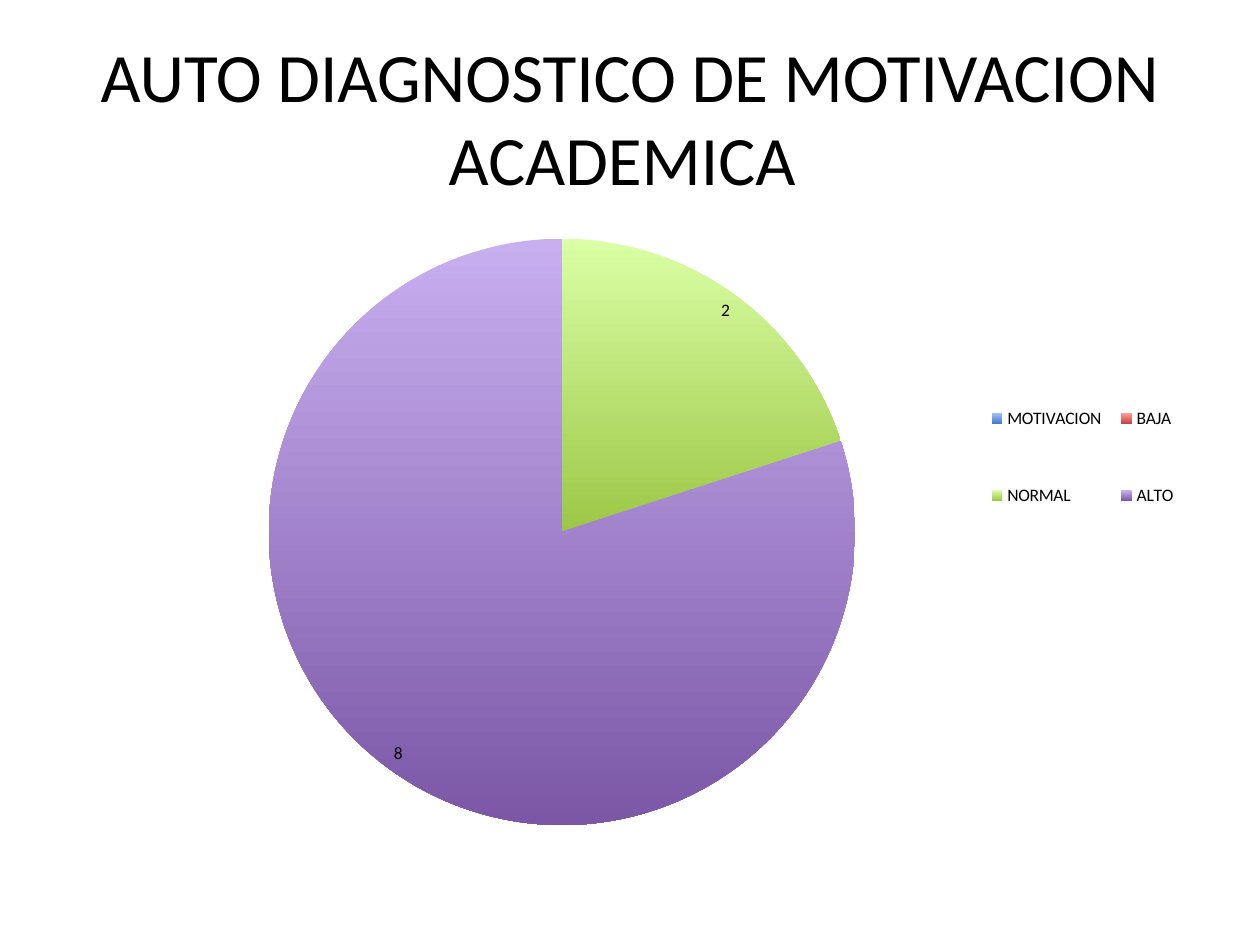
"""Build a slide with a pie chart of academic motivation."""
from lxml import etree
from pptx import Presentation
from pptx import util as u
from pptx.chart.data import CategoryChartData
from pptx.dml.color import RGBColor
from pptx.enum import chart as charts
from pptx.enum import text
from pptx.oxml import ns

FONT = "Calibri"
COLORS = {"text": "000000", "background": "FFFFFF"}
LEVELS = [
    ("MOTIVACION ", None, "A0C0FA", "4878C8"),
    ("BAJA ", None, "FF9C9A", "C84440"),
    ("NORMAL", 2, "DAFFA5", "9CC746"),
    ("ALTO", 8, "C8AFF0", "7B57A6"),
]


def px(length):
    """Convert pixels to EMU."""
    return u.Emu(round(length * 914400 / 126))


def place(shape, left, top, width, height):
    """Set the position and size of a shape in pixels."""
    shape.left, shape.top = px(left), px(top)
    shape.width, shape.height = px(width), px(height)


def format_font(font, size, color):
    """Apply the family, size and colour to a font."""
    font.name, font.size = FONT, u.Pt(size)
    font.color.rgb = RGBColor.from_string(color)


def write_text(frame, content, *, size, color=COLORS["text"],
               align=text.PP_ALIGN.CENTER, anchor=text.MSO_ANCHOR.MIDDLE):
    """Write one formatted paragraph in a text frame."""
    frame.word_wrap = True
    frame.auto_size = text.MSO_AUTO_SIZE.NONE
    frame.vertical_anchor = anchor
    paragraph = frame.paragraphs[0]
    paragraph.alignment = align
    run = paragraph.add_run()
    run.text = content
    format_font(run.font, size, color)


def fill_gradient(fill, top_color, bottom_color):
    """Apply a vertical gradient between two colours."""
    fill.gradient()
    fill.gradient_angle = 270
    for stop, color in zip(fill.gradient_stops, (top_color, bottom_color)):
        stop.color.rgb = RGBColor.from_string(color)


def set_layout(parent, before, inner=False, **fractions):
    """Give a chart part a manual layout in fractions of the chart."""
    for old in parent.findall(ns.qn("c:layout")):
        parent.remove(old)
    layout = etree.Element(ns.qn("c:layout"))
    manual = etree.SubElement(layout, ns.qn("c:manualLayout"))
    settings = {"layoutTarget": "inner"} if inner else {}
    settings.update(xMode="edge", yMode="edge", **fractions)
    for name, value in settings.items():
        etree.SubElement(manual, ns.qn(f"c:{name}")).set("val", str(value))
    parent.find(ns.qn(before)).addprevious(layout)


def add_pie(slide, left, top, width, height):
    """Add the pie chart with its labels and legend."""
    data = CategoryChartData()
    data.categories = [level[0] for level in LEVELS]
    data.add_series("Series 1", [level[1] for level in LEVELS])
    chart = slide.shapes.add_chart(
        charts.XL_CHART_TYPE.PIE, px(left), px(top), px(width), px(height), data
    ).chart
    chart.has_title = False
    format_font(chart.font, 10, COLORS["text"])
    plot = chart.plots[0]
    plot.vary_by_categories = True
    for index, (_, value, top_color, bottom_color) in enumerate(LEVELS):
        point = plot.series[0].points[index]
        fill_gradient(point.format.fill, top_color, bottom_color)
        point.format.line.fill.background()
        if value is not None:
            point.data_label.position = charts.XL_LABEL_POSITION.INSIDE_END
    chart.has_legend = True
    chart.legend.position = charts.XL_LEGEND_POSITION.RIGHT
    chart.legend.include_in_layout = False
    plot_area = chart.element.find(".//" + ns.qn("c:plotArea"))
    set_layout(plot_area, "c:pieChart", inner=True, x=0.18, y=0.03, w=0.52, h=0.94)
    legend = chart.element.find(".//" + ns.qn("c:legend"))
    set_layout(legend, "c:overlay", x=0.81, y=0.21, w=0.18, h=0.34)


def main():
    """Build and save the presentation."""
    presentation = Presentation()
    presentation.slide_width, presentation.slide_height = px(1260), px(945)
    slide = presentation.slides.add_slide(presentation.slide_layouts[5])
    background = slide.background.fill
    background.solid()
    background.fore_color.rgb = RGBColor.from_string(COLORS["background"])
    title = slide.shapes.title
    place(title, 63, 38, 1134, 157)
    write_text(title.text_frame, "AUTO DIAGNOSTICO DE MOTIVACION ACADEMICA ", size=39.6)
    add_pie(slide, 63, 220, 1134, 624)
    presentation.save("out.pptx")


if __name__ == "__main__":
    main()
